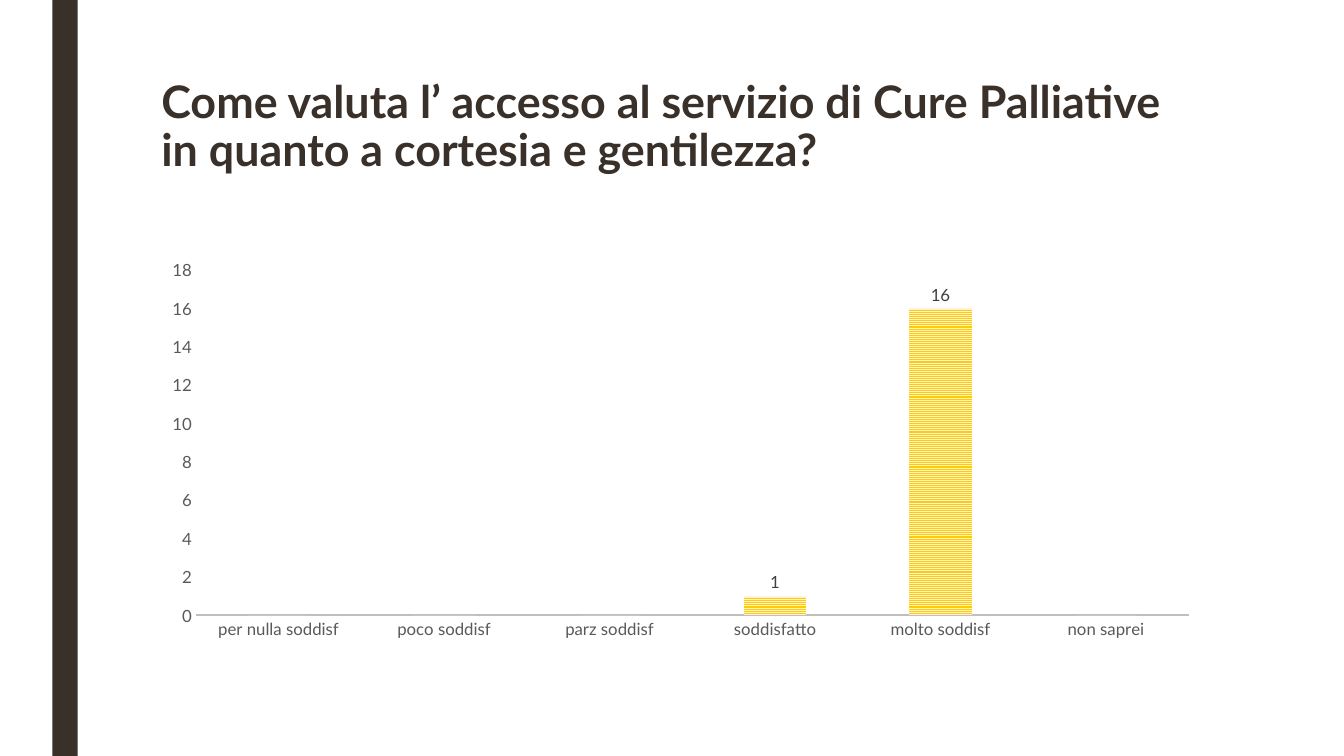
from pptx import Presentation
from pptx.chart.data import CategoryChartData
from pptx.dml.color import RGBColor
from pptx.enum.chart import XL_CHART_TYPE, XL_LABEL_POSITION, XL_TICK_MARK
from pptx.enum.dml import MSO_PATTERN
from pptx.enum.shapes import MSO_SHAPE
from pptx.enum.text import MSO_ANCHOR, MSO_AUTO_SIZE, PP_ALIGN
from pptx.util import Inches, Pt

COLUMN = XL_CHART_TYPE.COLUMN_CLUSTERED
ABOVE = XL_LABEL_POSITION.OUTSIDE_END
NO_TICK = XL_TICK_MARK.NONE
STRIPES = MSO_PATTERN.NARROW_HORIZONTAL
RECT = MSO_SHAPE.RECTANGLE
TOP = MSO_ANCHOR.TOP
FIXED = MSO_AUTO_SIZE.NONE
LEFT = PP_ALIGN.LEFT

FONT = "Lato"
BROWN = RGBColor(0x39, 0x30, 0x2A)
GREY = RGBColor(0x59, 0x59, 0x59)
DARK = RGBColor(0x40, 0x40, 0x40)
RULE = RGBColor(0xBF, 0xBF, 0xBF)
GOLD = RGBColor(0xFF, 0xCA, 0x08)
CREAM = RGBColor(0xFF, 0xF4, 0xCE)

TITLE = ("Come valuta l’ accesso al servizio di Cure Palliative "
         "in quanto a cortesia e gentilezza?")
VOTES = {
    "per nulla soddisf": 0,
    "poco soddisf": 0,
    "parz soddisf": 0,
    "soddisfatto": 1,
    "molto soddisf": 16,
    "non saprei": 0,
}


def set_font(font, size, color, bold=False):
    """Apply the slide font with a size, colour and weight."""
    font.name = FONT
    font.size = Pt(size)
    font.bold = bold
    font.color.rgb = color


def add_band(slide):
    """Draw the dark vertical band at the left."""
    band = slide.shapes.add_shape(
        RECT, Inches(0.52), Inches(0), Inches(0.25), Inches(7.5))
    band.shadow.inherit = False
    band.fill.solid()
    band.fill.fore_color.rgb = BROWN
    band.line.fill.background()


def set_title(slide):
    """Place and format the title."""
    title = slide.shapes.title
    title.left, title.top = Inches(1.5), Inches(0.75)
    title.width, title.height = Inches(10.5), Inches(1.62)
    frame = title.text_frame
    frame.text = TITLE
    frame.word_wrap = True
    frame.auto_size = FIXED
    frame.vertical_anchor = TOP
    para = frame.paragraphs[0]
    para.alignment = LEFT
    para.line_spacing = 0.89
    set_font(para.font, 32, BROWN, True)


def style_axis(axis):
    """Format the labels of an axis and drop its ticks and grid."""
    axis.major_tick_mark = axis.minor_tick_mark = NO_TICK
    axis.has_major_gridlines = False
    set_font(axis.tick_labels.font, 12, GREY)


def style_bars(plot):
    """Fill the bars with stripes and label those above zero."""
    plot.gap_width = 164
    plot.overlap = -22
    plot.vary_by_categories = False
    fill = plot.series[0].format.fill
    fill.patterned()
    fill.pattern = STRIPES
    fill.fore_color.rgb = GOLD
    fill.back_color.rgb = CREAM
    plot.has_data_labels = True
    labels = plot.data_labels
    labels.show_value = True
    labels.position = ABOVE
    labels.number_format = "0;;"
    labels.number_format_is_linked = False
    set_font(labels.font, 12, DARK)


def add_votes(slide):
    """Add the column chart of the answers."""
    data = CategoryChartData()
    data.categories = list(VOTES)
    data.add_series("Series 1", list(VOTES.values()))
    chart = slide.shapes.add_chart(
        COLUMN, Inches(1.5), Inches(2.5), Inches(10.5), Inches(3.92),
        data).chart
    chart.has_legend = False
    chart.has_title = False
    chart.font.name = FONT
    chart.font.size = Pt(10)
    style_axis(chart.category_axis)
    style_axis(chart.value_axis)
    line = chart.category_axis.format.line
    line.color.rgb = RULE
    line.width = Pt(1.5)
    chart.value_axis.format.line.fill.background()
    chart.value_axis.minimum_scale = 0
    chart.value_axis.maximum_scale = 18
    chart.value_axis.major_unit = 2
    style_bars(chart.plots[0])


def main():
    """Build the slide and save it."""
    deck = Presentation()
    deck.slide_width, deck.slide_height = Inches(13.33), Inches(7.5)
    slide = deck.slides.add_slide(deck.slide_layouts.get_by_name("Title Only"))
    add_band(slide)
    set_title(slide)
    add_votes(slide)
    deck.save("out.pptx")


if __name__ == "__main__":
    main()
